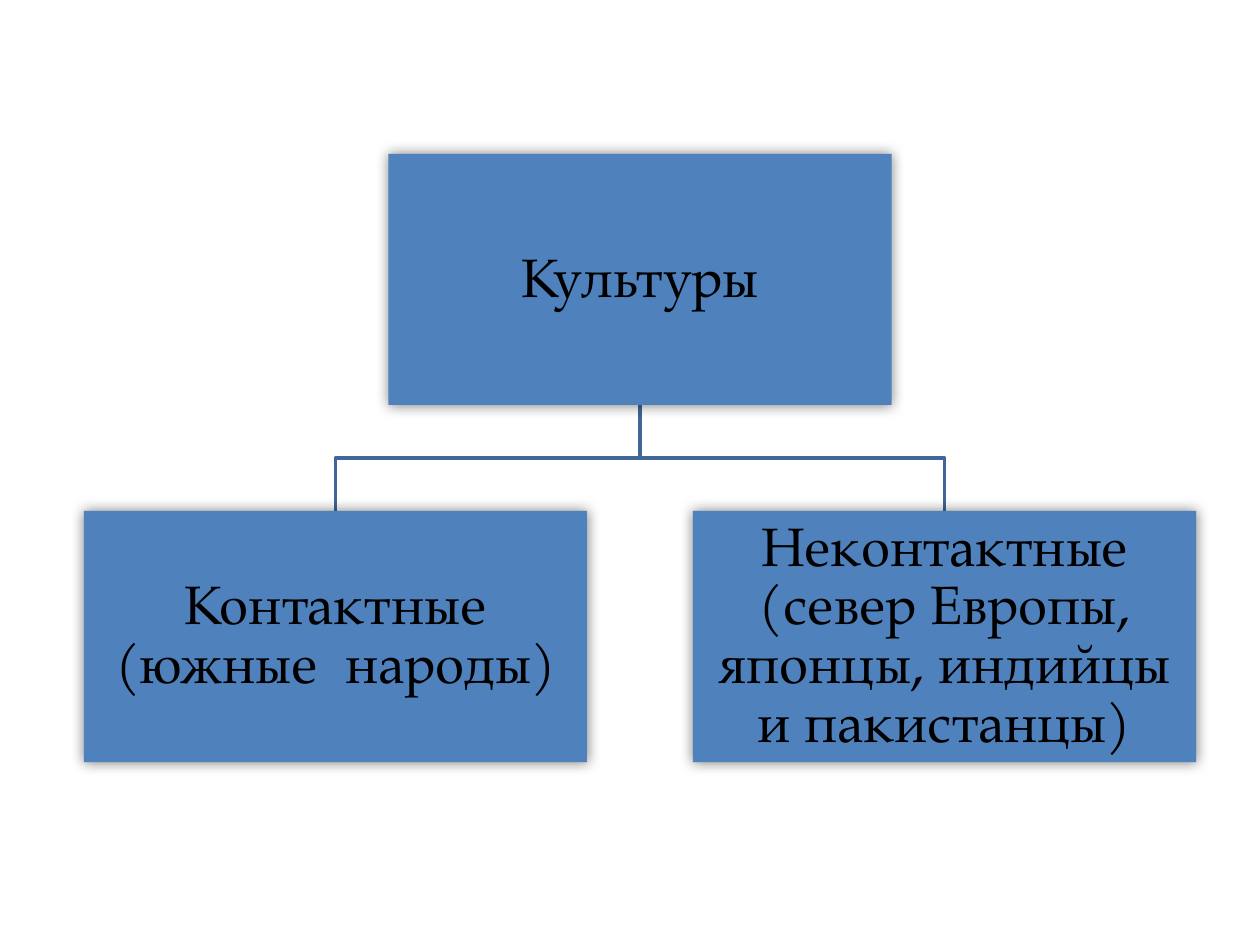
"""Build a slide with a two-branch chart of contact and non-contact cultures."""
from lxml import etree
from pptx import Presentation
from pptx import util as u
from pptx.dml.color import RGBColor
from pptx.enum import shapes, text
from pptx.oxml.ns import qn

ROOT = "Культуры"
BRANCHES = [
    "Контактные (южные  народы)",
    "Неконтактные (север Европы, японцы, индийцы и пакистанцы)",
]

THEME = {
    "font": "TeX Gyre Pagella",
    "size": 31,
    "text": RGBColor.from_string("000000"),
    "box": RGBColor.from_string("4F81BD"),
    "line": RGBColor.from_string("3F6797"),
    "line_width": 2,
    "shadow": {"color": "000000", "alpha": 50, "blur": 7.5},
}
SLIDE_W, SLIDE_H = 720, 540
BOX_W, BOX_H = 287.5, 143.5
CENTER_X, ROOT_TOP = 365.75, 88
STEP_X, GAP_Y = 348, 60.5
INSET = 1.5


def set_attrs(obj, values):
    for name, value in values.items():
        setattr(obj, name, value)


def add_glow_shadow(sp):
    cfg = THEME["shadow"]
    sp.shadow.inherit = False
    effects = sp._element.spPr.find(qn("a:effectLst"))
    shadow = etree.SubElement(effects, qn("a:outerShdw"), blurRad=str(int(u.Pt(cfg["blur"]))),
                              dist="0", dir="0", rotWithShape="0")
    color = etree.SubElement(shadow, qn("a:srgbClr"), val=cfg["color"])
    etree.SubElement(color, qn("a:alpha"), val=str(cfg["alpha"] * 1000))


def add_box(s, label, center_x, top):
    sp = s.shapes.add_shape(shapes.MSO_SHAPE.RECTANGLE, u.Pt(center_x - BOX_W / 2), u.Pt(top),
                            u.Pt(BOX_W), u.Pt(BOX_H))
    sp.fill.solid()
    sp.fill.fore_color.rgb = THEME["box"]
    sp.line.fill.background()
    add_glow_shadow(sp)
    tf = sp.text_frame
    set_attrs(tf, {"word_wrap": True, "vertical_anchor": text.MSO_ANCHOR.MIDDLE})
    set_attrs(tf, {f"margin_{side}": u.Pt(INSET) for side in ("left", "top", "right", "bottom")})
    p = tf.paragraphs[0]
    set_attrs(p, {"alignment": text.PP_ALIGN.CENTER, "line_spacing": 0.9})
    r = p.add_run()
    r.text = label
    set_attrs(r.font, {"name": THEME["font"], "size": u.Pt(THEME["size"])})
    r.font.color.rgb = THEME["text"]


def add_branch_line(s, child_x, top, bottom):
    middle = (top + bottom) / 2
    points = [(CENTER_X, middle), (child_x, middle), (child_x, bottom)]
    builder = s.shapes.build_freeform(u.Pt(CENTER_X), u.Pt(top), scale=1.0)
    builder.add_line_segments([(u.Pt(x), u.Pt(y)) for x, y in points], close=False)
    sp = builder.convert_to_shape()
    sp.fill.background()
    sp.line.color.rgb = THEME["line"]
    sp.line.width = u.Pt(THEME["line_width"])
    sp.shadow.inherit = False


def main():
    prs = Presentation()
    set_attrs(prs, {"slide_width": u.Pt(SLIDE_W), "slide_height": u.Pt(SLIDE_H)})
    s = prs.slides.add_slide(prs.slide_layouts[6])
    root_bottom = ROOT_TOP + BOX_H
    branch_top = root_bottom + GAP_Y
    centers = [CENTER_X + (i - (len(BRANCHES) - 1) / 2) * STEP_X for i in range(len(BRANCHES))]
    for x in reversed(centers):
        add_branch_line(s, x, root_bottom, branch_top)
    add_box(s, ROOT, CENTER_X, ROOT_TOP)
    for label, x in zip(BRANCHES, centers):
        add_box(s, label, x, branch_top)
    prs.save("out.pptx")


if __name__ == "__main__":
    main()
